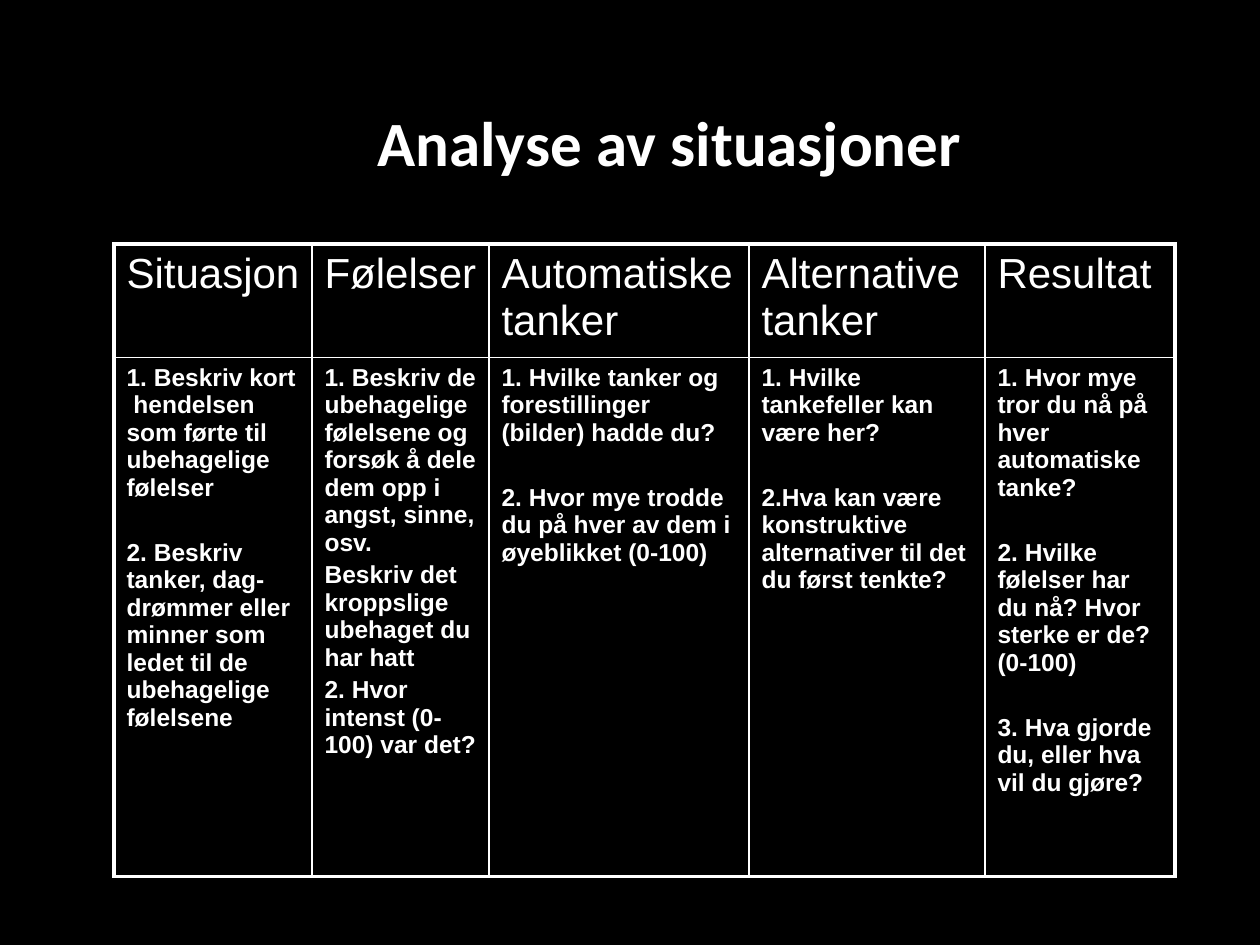
"""Build the slide with a five-column table for analysing situations."""
from lxml.etree import SubElement
from pptx import Presentation
from pptx.dml.color import RGBColor
from pptx.enum.text import MSO_ANCHOR as Anchor, PP_ALIGN as Align
from pptx.oxml.ns import qn
from pptx.util import Emu, Pt

BLACK = RGBColor(0, 0, 0)
WHITE = RGBColor(255, 255, 255)
PX = 914400 // 126
OUTER, INNER = Pt(2.25), Pt(1)
SMALL_GAP, LARGE_GAP = 2.8, 21.4

TITLE = "Analyse av situasjoner"
TITLE_BOX = (123, 86, 1093, 110)
TABLE_ORIGIN = (114, 244)
ROW_HEIGHTS = (106, 519)
COLUMNS = [
    ("Situasjon", 198, LARGE_GAP, [
        "1. Beskriv kort  hendelsen som førte til ubehagelige følelser",
        "2. Beskriv  tanker, dag-drømmer eller minner som ledet til de ubehagelige følelsene",
    ]),
    ("Følelser", 177, SMALL_GAP, [
        "1. Beskriv de ubehagelige følelsene og forsøk å dele dem opp i angst, sinne, osv.",
        "Beskriv det kroppslige ubehaget du har hatt",
        "2. Hvor intenst (0-100) var det?",
    ]),
    ("Automatiske tanker", 260, LARGE_GAP, [
        "1. Hvilke tanker og forestillinger (bilder) hadde du?",
        "2. Hvor mye trodde du på hver av dem i øyeblikket (0-100)",
    ]),
    ("Alternative tanker", 236, LARGE_GAP, [
        "1. Hvilke tankefeller kan være her?",
        "2.Hva kan være  konstruktive alternativer til det du først tenkte?",
    ]),
    ("Resultat", 190, LARGE_GAP, [
        "1. Hvor mye tror du nå på hver automatiske tanke?",
        "2. Hvilke følelser har du nå? Hvor sterke er de? (0-100)",
        "3. Hva gjorde du, eller hva vil du gjøre?",
    ]),
]


def px(*lengths):
    return [Emu(length * PX) for length in lengths]


def write(text_frame, paragraphs, font_name, size, bold, gap=0):
    text_frame.text = "\n".join(paragraphs)
    for index, paragraph in enumerate(text_frame.paragraphs):
        paragraph.space_before = Pt(gap if index else 0)
        for run in paragraph.runs:
            run.font.name = font_name
            run.font.size = Pt(size)
            run.font.bold = bold
            run.font.color.rgb = WHITE


def add_borders(cell, outer_sides):
    properties = cell._tc.get_or_add_tcPr()
    for index, side in enumerate("LRTB"):
        width = OUTER if side in outer_sides else INNER
        line = properties.makeelement(qn(f"a:ln{side}"), {"w": str(width)})
        fill = SubElement(line, qn("a:solidFill"))
        SubElement(fill, qn("a:srgbClr"), val=str(WHITE))
        properties.insert(index, line)


def add_title(slide):
    text_frame = slide.shapes.add_textbox(*px(*TITLE_BOX)).text_frame
    text_frame.word_wrap = True
    text_frame.vertical_anchor = Anchor.MIDDLE
    write(text_frame, [TITLE], "Calibri", 36, True)
    text_frame.paragraphs[0].alignment = Align.CENTER


def add_analysis_table(slide):
    size = (sum(column[1] for column in COLUMNS), sum(ROW_HEIGHTS))
    table = slide.shapes.add_table(
        len(ROW_HEIGHTS), len(COLUMNS), *px(*TABLE_ORIGIN, *size)).table
    for row, height in zip(table.rows, px(*ROW_HEIGHTS)):
        row.height = height
    last = len(COLUMNS) - 1
    for index, (heading, width, gap, questions) in enumerate(COLUMNS):
        table.columns[index].width = px(width)[0]
        header, body = table.cell(0, index), table.cell(1, index)
        write(header.text_frame, [heading], "Arial", 24, False)
        write(body.text_frame, questions, "Arial", 14, True, gap)
        edge = {0: "L", last: "R"}.get(index, "")
        for cell, outer_side in ((header, "T"), (body, "B")):
            cell.fill.solid()
            cell.fill.fore_color.rgb = BLACK
            add_borders(cell, outer_side + edge)


def main():
    presentation = Presentation()
    presentation.slide_width, presentation.slide_height = px(1260, 945)
    slide = presentation.slides.add_slide(presentation.slide_layouts[6])
    slide.background.fill.solid()
    slide.background.fill.fore_color.rgb = BLACK
    add_title(slide)
    add_analysis_table(slide)
    presentation.save("out.pptx")


if __name__ == "__main__":
    main()
